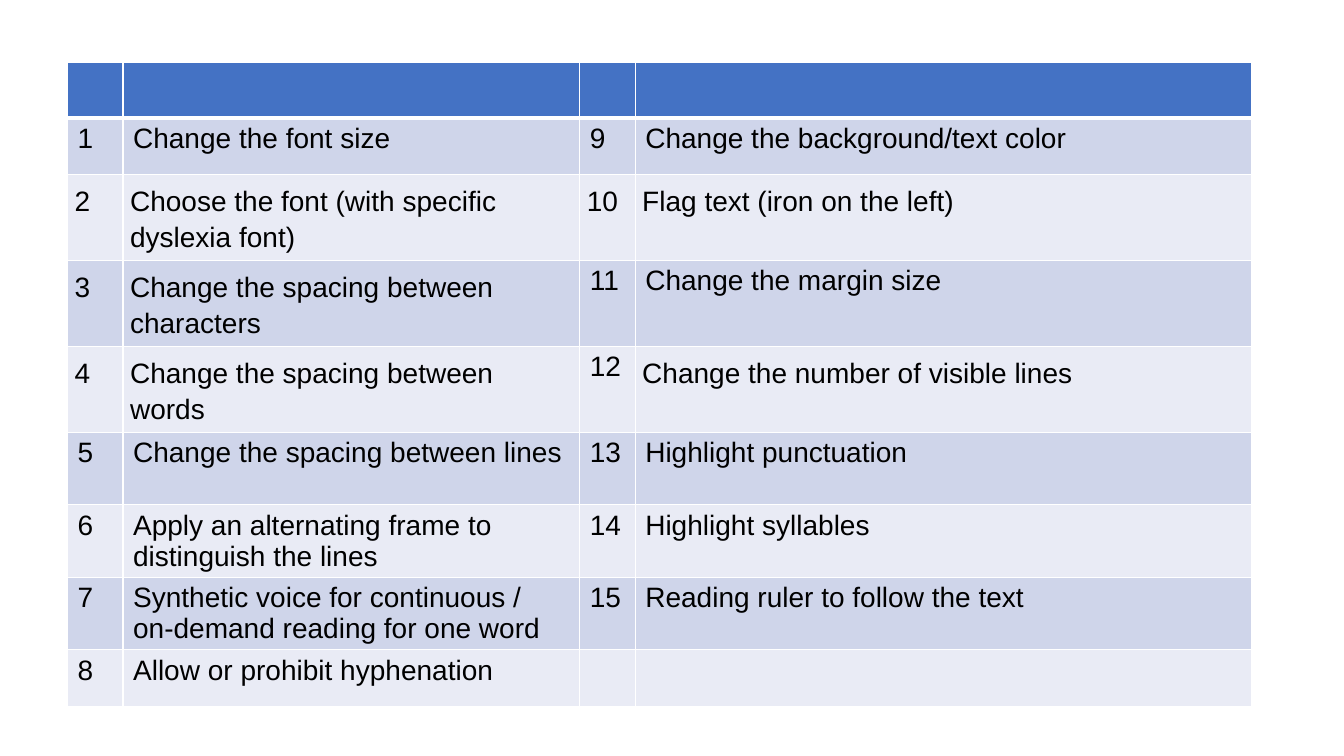
from pptx import Presentation
from pptx import util as u
from pptx.dml.color import RGBColor
from pptx.oxml import parse_xml
from pptx.oxml.ns import nsdecls


def paint(fmt, tint):
    fmt.solid()
    fmt.fore_color.rgb = RGBColor.from_string(tint)


def edge(cell, side, pts):
    line = parse_xml(
        f'<a:ln{side} {nsdecls("a")} w="{u.Pt(pts)}"><a:solidFill>'
        f'<a:srgbClr val="FFFFFF"/></a:solidFill></a:ln{side}>')
    cell._tc.get_or_add_tcPr().append(line)


deck = Presentation()
deck.slide_width, deck.slide_height = u.Inches(13.33), u.Inches(7.5)
slide = deck.slides.add_slide(deck.slide_layouts[6])

# Numbered features, split into two halves
left = [
    "Change the font size",
    "Choose the font (with specific dyslexia font)",
    "Change the spacing between characters",
    "Change the spacing between words",
    "Change the spacing between lines",
    "Apply an alternating frame to distinguish the lines",
    "Synthetic voice for continuous / on-demand reading for one word",
    "Allow or prohibit hyphenation",
]
right = [
    "Change the background/text color",
    "Flag text (iron on the left)",
    "Change the margin size",
    "Change the number of visible lines",
    "Highlight punctuation",
    "Highlight syllables",
    "Reading ruler to follow the text",
]
rows = [[""] * 4]
for n, item in enumerate(left):
    pair = [str(n + 9), right[n]] if n < len(right) else ["", ""]
    rows.append([str(n + 1), item] + pair)

# Table grid
wide = [0.55, 4.53, 0.55, 6.11]
high = [0.55, 0.56] + [0.85] * 3 + [0.72] * 3 + [0.56]
grid = slide.shapes.add_table(
    len(high), len(wide), u.Inches(0.67), u.Inches(0.62),
    u.Inches(sum(wide)), u.Inches(sum(high))).table
for col, size in zip(grid.columns, wide):
    col.width = u.Inches(size)
for row, size in zip(grid.rows, high):
    row.height = u.Inches(size)

# Cells with even margins and looser lines: row -> columns
loose = {2: (0, 1, 2, 3), 3: (0, 1), 4: (0, 1, 3)}
sides = ("left", "right", "top", "bottom")
look = {"name": "Arial", "size": u.Pt(20), "bold": False}

for r, row in enumerate(rows):
    tint = "4472C4" if r == 0 else ("E9EBF5", "CFD5EA")[r % 2]
    for c, words in enumerate(row):
        cell = grid.cell(r, c)
        # Borders, with a thick rule under the header
        for side in "LRTB":
            thick = (r, side) in ((0, "B"), (1, "T"))
            edge(cell, side, 3 if thick else 1)
        paint(cell.fill, tint)
        if not words:
            continue
        # Text
        cell.text = words
        para = cell.text_frame.paragraphs[0]
        font = para.runs[0].font
        for key, val in look.items():
            setattr(font, key, val)
        paint(font.fill, "000000")
        if c in loose.get(r, ()):
            para.line_spacing = 1.15
            for side in sides:
                setattr(cell, "margin_" + side, u.Inches(0.07))

deck.save("out.pptx")
